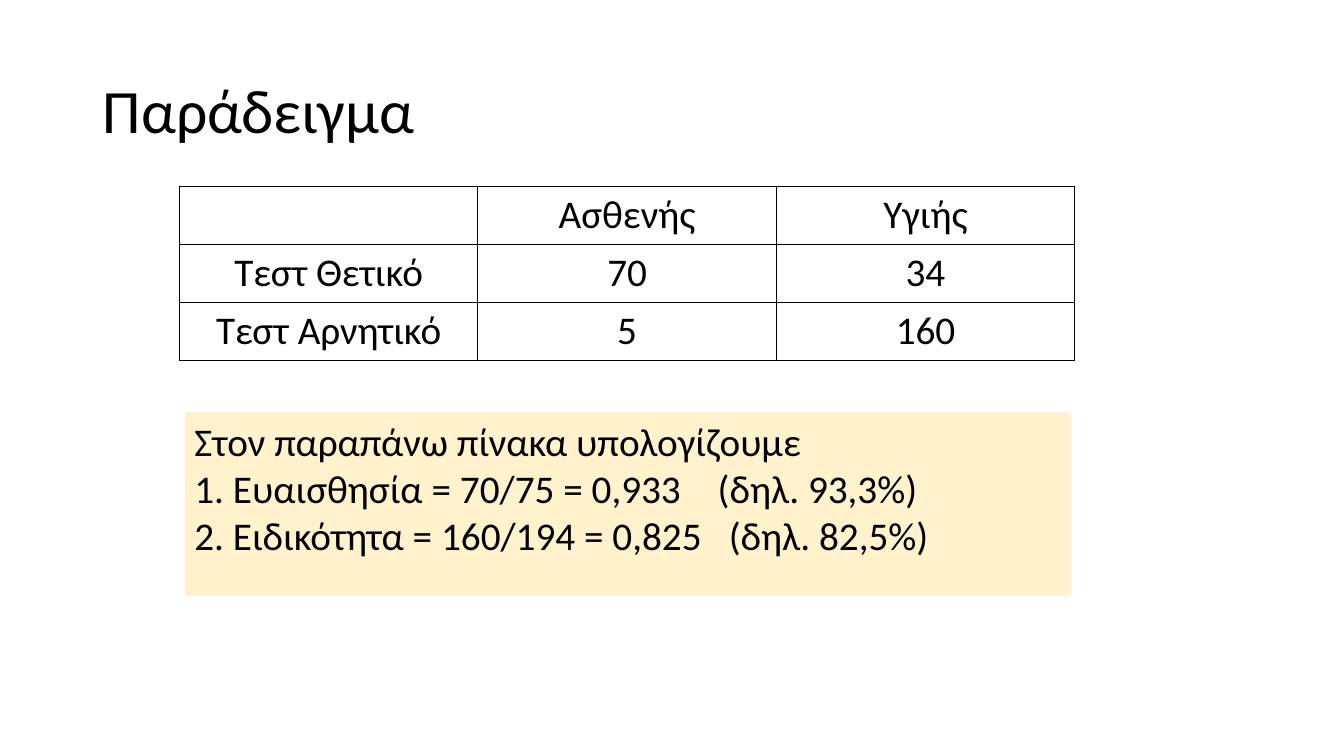
from lxml import etree
from pptx import Presentation
from pptx import util as u
from pptx.dml.color import RGBColor
from pptx.enum import shapes, text
from pptx.oxml.ns import qn

PX = 9144  # EMU per px, 100 px to the inch
FONT = "Calibri"
COLORS = {"ink": "000000", "note": "FFF2CC"}

RESULTS = [
    ["", "Ασθενής", "Υγιής"],
    ["Τεστ Θετικό", "70", "34"],
    ["Τεστ Αρνητικό", "5", "160"],
]
# Each line with the tab position of its percentage, in px
NOTES = [
    ("Στον παραπάνω πίνακα υπολογίζουμε", None),
    ("1. Ευαισθησία = 70/75 = 0,933\t(δηλ. 93,3%)", 519),
    ("2. Ειδικότητα = 160/194 = 0,825\t(δηλ. 82,5%)", 530),
]


def px(*lengths):
    return [u.Emu(n * PX) for n in lengths]


def write(p, content, size=28, align=text.PP_ALIGN.LEFT, spacing=None):
    p.alignment = align
    p.line_spacing = spacing
    p.font.size = u.Pt(size)
    r = p.add_run()
    r.text = content
    r.font.name = FONT
    r.font.size = u.Pt(size)
    r.font.color.rgb = RGBColor.from_string(COLORS["ink"])


def add_tab_stop(p, pos):
    tabs = etree.SubElement(p._p.get_or_add_pPr(), qn("a:tabLst"))
    etree.SubElement(tabs, qn("a:tab"), pos=str(pos * PX), algn="l")


def set_borders(cell, width=1):
    tcPr = cell._tc.get_or_add_tcPr()
    for i, side in enumerate(("lnL", "lnR", "lnT", "lnB")):
        ln = etree.Element(qn(f"a:{side}"), w=str(u.Pt(width)))
        fill = etree.SubElement(ln, qn("a:solidFill"))
        etree.SubElement(fill, qn("a:srgbClr"), val=COLORS["ink"])
        tcPr.insert(i, ln)


def add_title(slide, content, box):
    sp = slide.shapes.title
    sp.left, sp.top, sp.width, sp.height = px(*box)
    tf = sp.text_frame
    tf.vertical_anchor = text.MSO_ANCHOR.MIDDLE
    write(tf.paragraphs[0], content, size=44, spacing=0.9)


def add_grid(slide, rows, left, top, col_width, row_height):
    n_rows, n_cols = len(rows), len(rows[0])
    box = px(left, top, col_width * n_cols, row_height * n_rows)
    table = slide.shapes.add_table(n_rows, n_cols, *box).table
    table.first_row = table.horz_banding = False
    for y, row in enumerate(rows):
        for x, value in enumerate(row):
            cell = table.cell(y, x)
            cell.fill.background()
            set_borders(cell)
            p = cell.text_frame.paragraphs[0]
            if value:
                write(p, value, align=text.PP_ALIGN.CENTER)


def add_note(slide, lines, box):
    sp = slide.shapes.add_shape(shapes.MSO_SHAPE.RECTANGLE, *px(*box))
    sp.shadow.inherit = False
    sp.fill.solid()
    sp.fill.fore_color.rgb = RGBColor.from_string(COLORS["note"])
    sp.line.fill.background()
    tf = sp.text_frame
    tf.word_wrap = True
    tf.vertical_anchor = text.MSO_ANCHOR.TOP
    for i, (line, tab) in enumerate(lines):
        p = tf.add_paragraph() if i else tf.paragraphs[0]
        write(p, line)
        if tab:
            add_tab_stop(p, tab)


def main():
    prs = Presentation()
    prs.slide_width, prs.slide_height = px(1333, 750)
    slide = prs.slides.add_slide(prs.slide_layouts[5])

    # Title
    add_title(slide, "Παράδειγμα", (92, 40, 1150, 145))
    # Test results by condition
    add_grid(slide, RESULTS, left=178, top=185, col_width=296, row_height=57)
    # Worked sensitivity and specificity
    add_note(slide, NOTES, (183, 409, 879, 182))

    prs.save("out.pptx")


if __name__ == "__main__":
    main()
